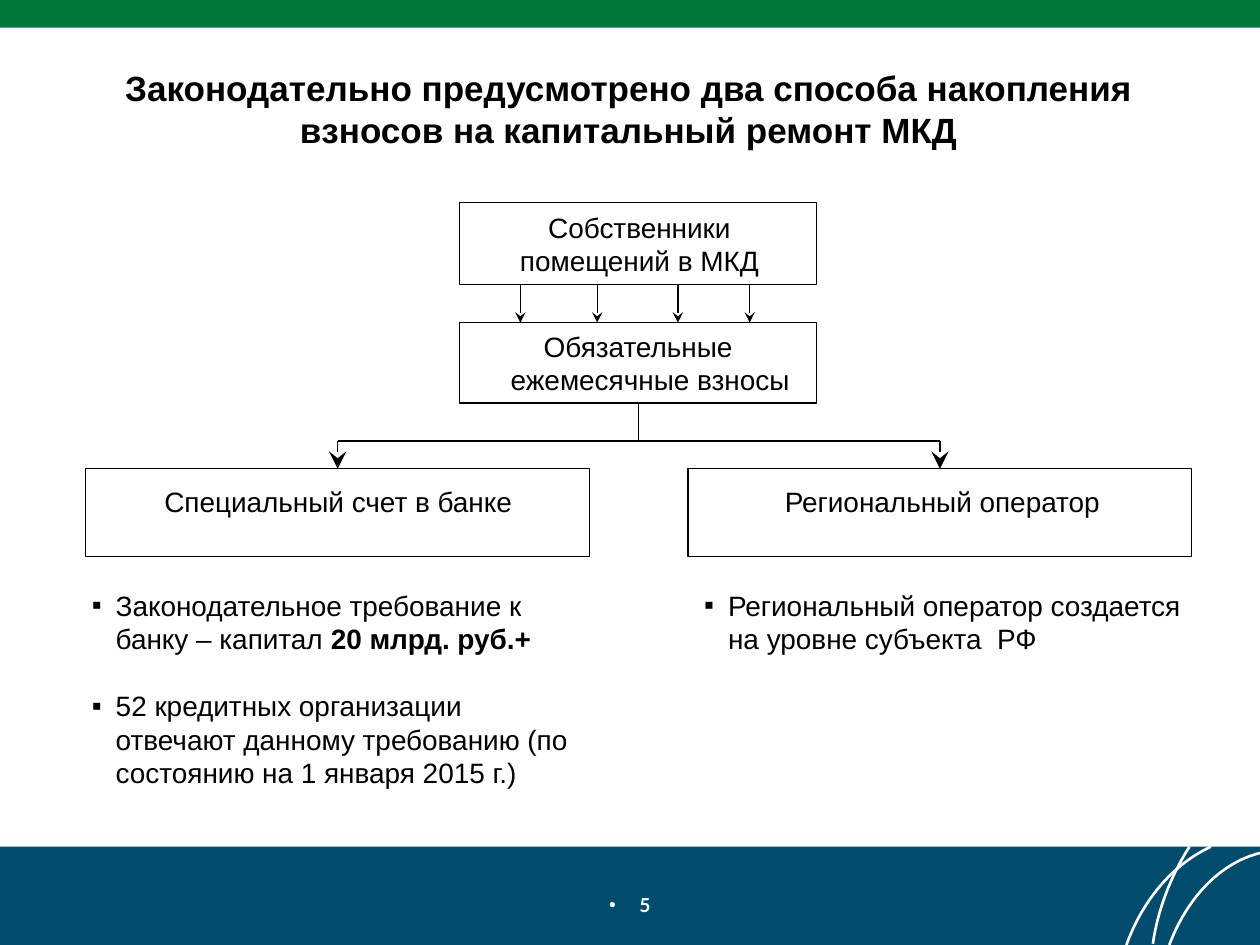
from dataclasses import dataclass

from lxml import etree
from pptx import Presentation
from pptx.dml.color import RGBColor
from pptx.enum.shapes import MSO_CONNECTOR, MSO_SHAPE
from pptx.enum.text import MSO_ANCHOR, PP_ALIGN
from pptx.oxml.ns import qn
from pptx.util import Inches, Pt

RECT = MSO_SHAPE.RECTANGLE
LINE = MSO_CONNECTOR.STRAIGHT
MID, LEFT = PP_ALIGN.CENTER, PP_ALIGN.LEFT
TOP, BOTTOM = 0, 2
COLS, ROWS = 100, 75
HEX = {"ink": "000000", "paper": "FFFFFF", "green": "00783C", "blue": "014C6D"}
HANG = 1.9

deck = Presentation()
deck.slide_width, deck.slide_height = Inches(10), Inches(7.5)
slide = deck.slides.add_slide(deck.slide_layouts[6])
shapes = slide.shapes
CELL = deck.slide_width / COLS


@dataclass
class Area:
    """A block of the grid: column, row, columns wide, rows high."""
    col: float
    row: float
    wide: float
    high: float

    def emu(self) -> list[int]:
        return [unit(n) for n in (self.col, self.row, self.wide, self.high)]


@dataclass
class Run:
    text: str
    bold: bool = False


@dataclass
class Para:
    runs: list[Run]
    align: PP_ALIGN = MID
    mark: str = ""
    hang: float = 0
    before: float = 0


@dataclass
class Note:
    area: Area
    paras: list[Para]
    size: float = 16
    font: str = "Arial"
    tint: str = "ink"


def unit(cells: float) -> int:
    return round(cells * CELL)


def color(name: str) -> RGBColor:
    return RGBColor.from_string(HEX[name])


def add_rect(area: Area, fill: str = "paper", edge: str = ""):
    box = shapes.add_shape(RECT, *area.emu())
    box.shadow.inherit = False
    box.fill.solid()
    box.fill.fore_color.rgb = color(fill)
    if edge:
        box.line.color.rgb = color(edge)
        box.line.width = Pt(0.75)
    else:
        box.line.fill.background()
    return box


def write(frame, note: Note) -> None:
    frame.word_wrap = True
    for i, para in enumerate(note.paras):
        line = frame.paragraphs[0] if i == 0 else frame.add_paragraph()
        line.alignment = para.align
        line.space_before = Pt(para.before)
        props = line._p.get_or_add_pPr()
        if para.hang:
            props.set("marL", str(unit(para.hang)))
            props.set("indent", str(-unit(para.hang)))
        if para.mark:
            etree.SubElement(props, qn("a:buFont"), typeface="Arial")
            etree.SubElement(props, qn("a:buChar"), char=para.mark)
        for part in para.runs:
            run = line.add_run()
            run.text = part.text
            run.font.name, run.font.size = note.font, Pt(note.size)
            run.font.bold = part.bold
            run.font.color.rgb = color(note.tint)


def add_note(note: Note) -> None:
    write(shapes.add_textbox(*note.area.emu()).text_frame, note)


def add_line(x1: float, y1: float, x2: float, y2: float, head: str = ""):
    """Draw a thin line; head is the arrowhead size, sm to lg."""
    link = shapes.add_connector(LINE, *[unit(n) for n in (x1, y1, x2, y2)])
    link.line.color.rgb = color("ink")
    link.line.width = Pt(0.75)
    if head:
        etree.SubElement(link.line._get_or_add_ln(), qn("a:tailEnd"),
                         type="stealth", w=head, len=head)
    etree.SubElement(link._element.spPr, qn("a:effectLst"))
    return link


def add_arc(*knots: tuple[float, float], steps: int = 24) -> None:
    """Trace a cubic curve through its four control points."""
    dots = []
    for i in range(steps + 1):
        t = i / steps
        parts = ((1 - t) ** 3, 3 * t * (1 - t) ** 2, 3 * t * t * (1 - t), t ** 3)
        dots.append(tuple(unit(sum(w * k[axis] for w, k in zip(parts, knots)))
                          for axis in (0, 1)))
    path = shapes.build_freeform(*dots[0])
    path.add_line_segments(dots[1:], close=False)
    arc = path.convert_to_shape()
    arc.shadow.inherit = False
    arc.fill.background()
    arc.line.color.rgb = color("paper")
    arc.line.width = Pt(1.5)


# Bands and arcs
add_rect(Area(0, 67.2, COLS, 7.8), "blue")
add_rect(Area(0, 0, COLS, 2.2), "green")
add_arc((96.1, 67.2), (93.1, 68.6), (90.7, 71.4), (89.4, 75))
add_arc((100, 67.7), (96.8, 68.5), (94.2, 71.3), (92.8, 75))
add_arc((94.4, 67.2), (93, 69.4), (91.9, 72.1), (91.5, 74.9))

# Boxes
owners = add_rect(Area(36.5, 16.1, 28.3, 6.5), edge="ink")
fees = add_rect(Area(36.5, 25.6, 28.3, 6.4), edge="ink")
banks = [add_rect(Area(col, 37.2, 40, 7), edge="ink") for col in (6.8, 54.6)]

# Links
for col in (41.3, 47.4, 53.8, 59.5):
    add_line(col, 22.6, col, 25.6, "med")
add_line(50.65, 32, 50.65, 35).begin_connect(fees, BOTTOM)
add_line(74.6, 35, 26.8, 35)
for col, bank in zip((26.8, 74.6), banks):
    add_line(col, 35, col, 37.2, "lg").end_connect(bank, TOP)

# Text
fees.text_frame.vertical_anchor = MSO_ANCHOR.MIDDLE
write(fees.text_frame, Note(Area(36.5, 25.6, 28.3, 6.4), [
    Para([Run("Обязательные ежемесячные взносы")], hang=HANG)]))
notes = [
    Note(Area(4.9, 4.8, 90, 7.7), [Para([Run(
        "Законодательно предусмотрено два способа накопления "
        "взносов на капитальный ремонт МКД", True)], before=10)], size=20),
    Note(Area(37.4, 16.2, 26.7, 6.4),
         [Para([Run("Собственники помещений в МКД")], before=8)]),
    Note(Area(10.3, 38, 33.1, 3.7), [Para([Run("Специальный счет в банке")])]),
    Note(Area(60.1, 38, 29.4, 3.7), [Para([Run("Региональный оператор")])]),
    Note(Area(6.3, 46.2, 40.5, 17.2), [
        Para([Run("Законодательное требование к банку – капитал "),
              Run("20 млрд. руб.+", True)], LEFT, "▪", HANG),
        Para([Run("52 кредитных организации отвечают данному требованию "
                  "(по состоянию на 1 января 2015 г.)")],
             LEFT, "▪", HANG, 19)]),
    Note(Area(54.9, 46.2, 39.8, 6.4), [Para([Run(
        "Региональный оператор создается на уровне субъекта  РФ")],
        LEFT, "▪", HANG)]),
    Note(Area(39.7, 70.4, 20.6, 3.1),
         [Para([Run("5", True)], mark="•", hang=2.4)], 11, "Lato", "paper"),
]
for note in notes:
    add_note(note)

deck.save("out.pptx")
